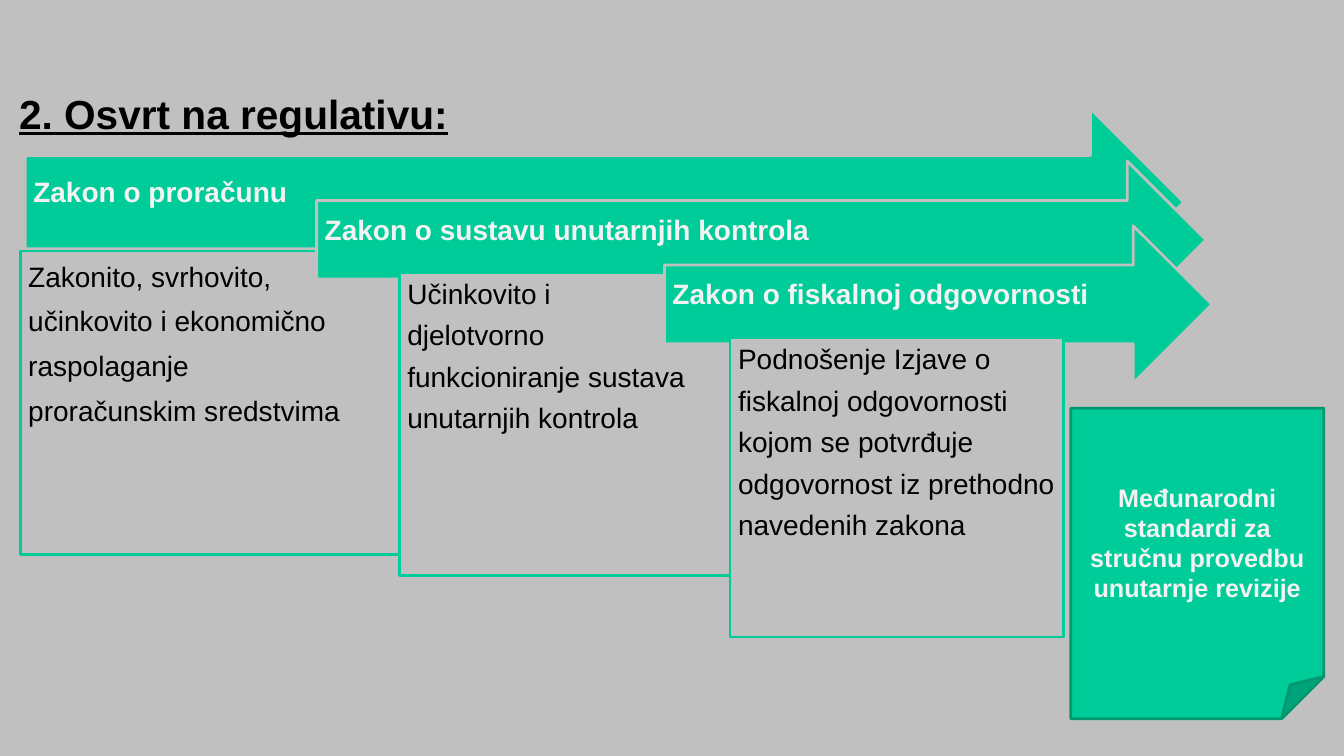
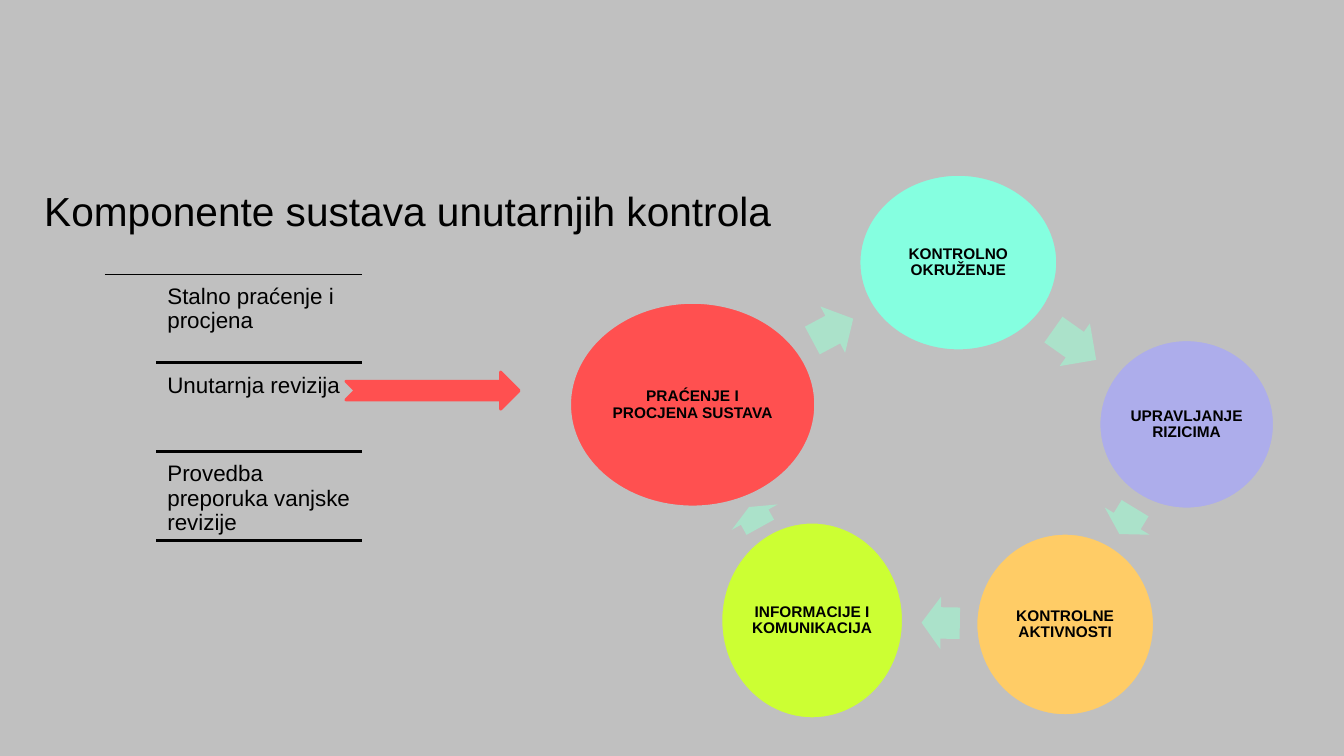
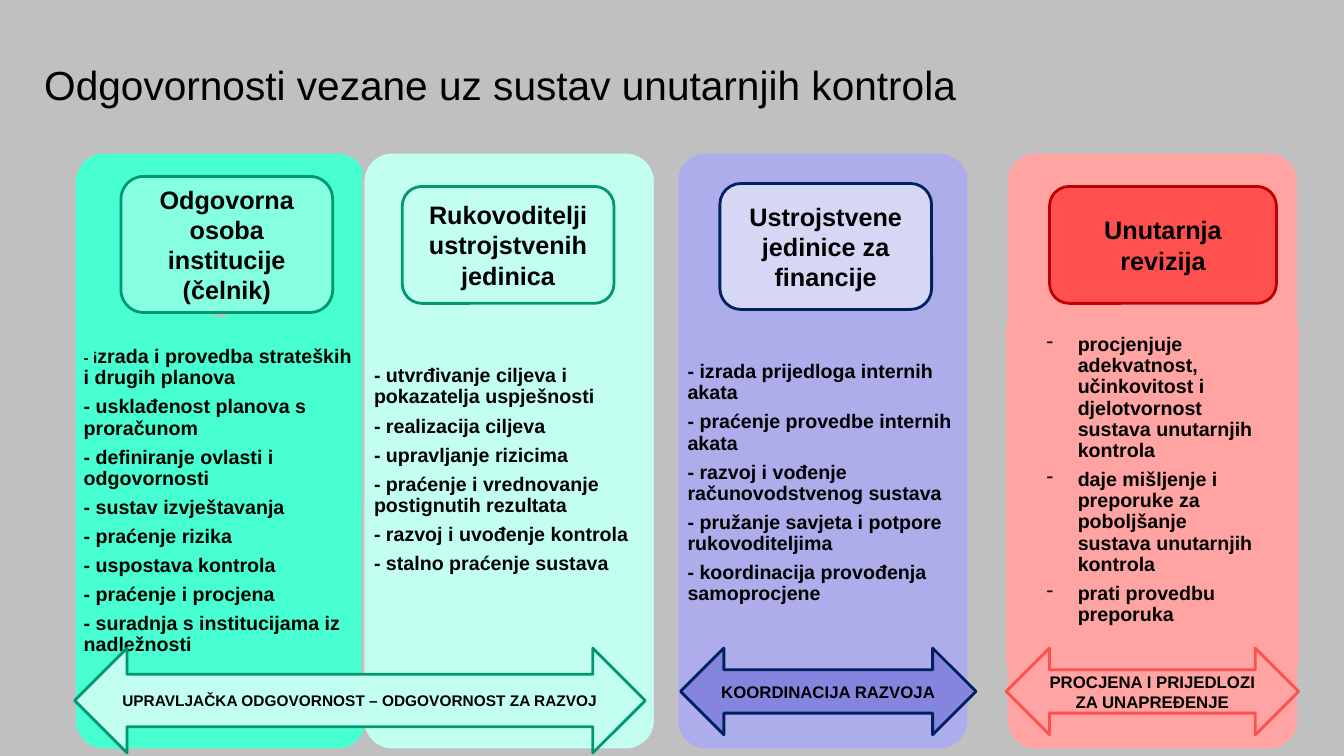
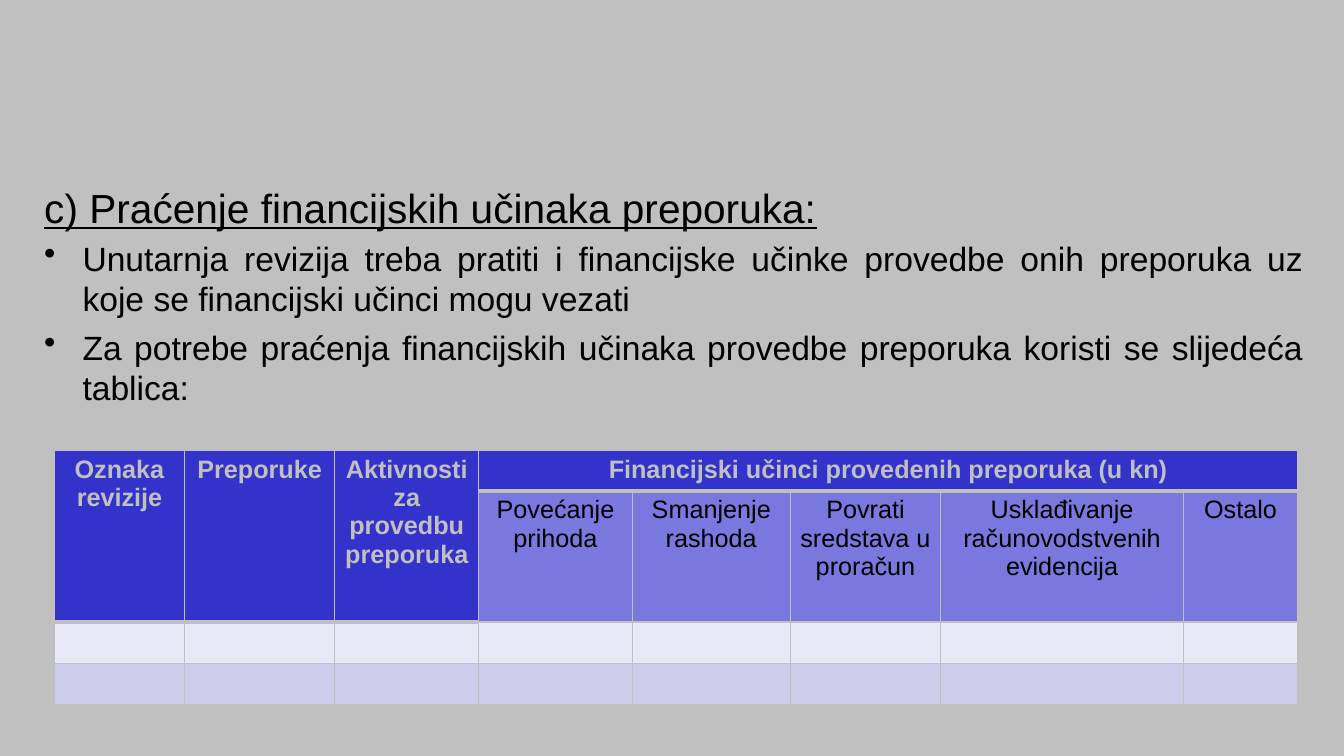
"""Builds four slides on internal control regulation, components, duties and effects."""
import copy

import pptx
import pptx.dml.color
import pptx.enum.shapes
import pptx.enum.text
import pptx.oxml.ns
import pptx.util
from lxml import etree

Inches = pptx.util.Inches
Pt = pptx.util.Pt
RGBColor = pptx.dml.color.RGBColor
MSO_SHAPE = pptx.enum.shapes.MSO_SHAPE
PP_ALIGN = pptx.enum.text.PP_ALIGN
MSO_ANCHOR = pptx.enum.text.MSO_ANCHOR
qn = pptx.oxml.ns.qn

GREY = RGBColor(0xC0, 0xC0, 0xC0)
BLACK = RGBColor(0x00, 0x00, 0x00)
OFF_WHITE = RGBColor(0xF2, 0xF2, 0xF2)
GREEN = RGBColor(0x00, 0xCC, 0x99)
DARK_GREEN = RGBColor(0x00, 0x97, 0x71)
BRIGHT_MINT = RGBColor(0x47, 0xFF, 0xD1)
MINT = RGBColor(0x85, 0xFF, 0xE0)
PALE_MINT = RGBColor(0xC2, 0xFF, 0xF0)
DUSTY_MINT = RGBColor(0xBD, 0xE7, 0xD4)
SAGE = RGBColor(0xAB, 0xE2, 0xCA)
LILAC = RGBColor(0xAD, 0xAD, 0xEB)
PALE_LILAC = RGBColor(0xD6, 0xD6, 0xF5)
VIOLET = RGBColor(0x85, 0x85, 0xE0)
NAVY = RGBColor(0x00, 0x20, 0x60)
ORANGE = RGBColor(0xFF, 0xCC, 0x66)
LIME = RGBColor(0xCC, 0xFF, 0x33)
RED = RGBColor(0xFF, 0x50, 0x50)
DARK_RED = RGBColor(0xC0, 0x00, 0x00)
PINK = RGBColor(0xFF, 0xA3, 0xA3)
HEAD_BLUE = RGBColor(0x33, 0x33, 0xCC)
SUBHEAD_BLUE = RGBColor(0x78, 0x78, 0xDE)
ROW_LIGHT = RGBColor(0xE8, 0xE8, 0xF6)
ROW_DARK = RGBColor(0xCE, 0xCE, 0xEC)


def box(s, kind, at, fill=None, line=None, rotation=0, adjustments=()):
    at = [Inches(v) for v in at]
    if kind is None:
        return s.shapes.add_textbox(*at)
    sp = s.shapes.add_shape(kind, *at)
    sp.shadow.inherit = False
    sp.rotation = rotation
    for i, value in enumerate(adjustments):
        sp.adjustments[i] = value
    sp.fill.solid()
    sp.fill.fore_color.rgb = fill
    if line is None:
        sp.line.fill.background()
    else:
        sp.line.color.rgb = line
        sp.line.width = Pt(2)
    return sp


def write(tf, text, size=18, bold=False, underline=False, color=BLACK,
          align=PP_ALIGN.LEFT, anchor=MSO_ANCHOR.TOP, inset=(0.1, 0.05, 0.1, 0.05),
          spacing=1.0, after=0, bullet=None, indent=0):
    tf.word_wrap = True
    tf.vertical_anchor = anchor
    tf.margin_left, tf.margin_top, tf.margin_right, tf.margin_bottom = map(Inches, inset)
    for i, line in enumerate(text.split("\n")):
        p = tf.add_paragraph() if i else tf.paragraphs[0]
        p.alignment = align
        p.line_spacing = spacing
        p.space_after = Pt(after)
        if bullet:
            pPr = p._p.get_or_add_pPr()
            pPr.set("marL", str(Inches(indent)))
            pPr.set("indent", str(-Inches(indent)))
            etree.SubElement(pPr, qn("a:buChar")).set("char", bullet)
        r = p.add_run()
        r.text = line
        r.font.name = "Arial"
        r.font.size = Pt(size)
        r.font.bold = bold
        r.font.underline = underline
        r.font.color.rgb = color


prs = pptx.Presentation()
prs.slide_width = Inches(13.33)
prs.slide_height = Inches(7.5)

CENTRED = dict(align=PP_ALIGN.CENTER, anchor=MSO_ANCHOR.MIDDLE)

slides = []
for title, left, top, fmt in [
    ("2. Osvrt na regulativu:", 0.09, 0.83, dict(bold=True, underline=True)),
    ("Komponente sustava unutarnjih kontrola", 0.34, 1.8, {}),
    ("Odgovornosti vezane uz sustav unutarnjih kontrola", 0.34, 0.55, {}),
    ("c) Praćenje financijskih učinaka preporuka:", 0.34, 1.77, dict(underline=True)),
]:
    s = prs.slides.add_slide(prs.slide_layouts[6])
    s.background.fill.solid()
    s.background.fill.fore_color.rgb = GREY
    write(box(s, None, (left, top, 12.68, 0.55)).text_frame, title, size=29, **fmt)
    slides.append(s)
regulation, components, duties, effects = slides

for law, arrow_at, purpose, rect_at, spacing in [
    ("Zakon o proračunu", (0.25, 1.08, 11.49, 1.85),
     "Zakonito, svrhovito,\nučinkovito i ekonomično\nraspolaganje\nproračunskim sredstvima",
     (0.2, 2.49, 4.16, 3.01), 1.0),
    ("Zakon o sustavu unutarnjih kontrola", (3.14, 1.6, 8.82, 1.56),
     "Učinkovito i\ndjelotvorno\nfunkcioniranje sustava\nunutarnjih kontrola",
     (3.96, 2.7, 3.31, 3.01), 0.9),
    ("Zakon o fiskalnoj odgovornosti", (6.59, 2.24, 5.43, 1.56),
     "Podnošenje Izjave o\nfiskalnoj odgovornosti\nkojom se potvrđuje\n"
     "odgovornost iz prethodno\nnavedenih zakona",
     (7.24, 3.35, 3.31, 2.97), 0.9),
]:
    sp = box(regulation, MSO_SHAPE.RIGHT_ARROW, arrow_at, GREEN, GREY)
    write(sp.text_frame, law, size=20, bold=True, color=OFF_WHITE, spacing=0.9,
          anchor=MSO_ANCHOR.MIDDLE, inset=(0.08, 0.08, 0.28, 0.25))
    sp = box(regulation, MSO_SHAPE.RECTANGLE, rect_at, GREY, GREEN)
    write(sp.text_frame, purpose, size=20, spacing=spacing, after=8, inset=(0.08,) * 4)

sp = box(regulation, MSO_SHAPE.FOLDED_CORNER, (10.62, 4.05, 2.51, 3.08), GREEN, DARK_GREEN)
write(sp.text_frame, "Međunarodni standardi za stručnu provedbu unutarnje revizije",
      bold=True, color=OFF_WHITE, **CENTRED)

for name, circle_at, fill, arrow_at, rotation in [
    ("KONTROLNO OKRUŽENJE", (8.52, 1.73, 1.97, 1.75), MINT, (10.4, 3.16, 0.52, 0.52), 35.3),
    ("UPRAVLJANJE RIZICIMA", (10.9, 3.37, 1.74, 1.68), LILAC, (11.03, 4.91, 0.3, 0.52), 121.3),
    ("KONTROLNE AKTIVNOSTI", (9.68, 5.29, 1.77, 1.81), ORANGE, (9.14, 5.92, 0.38, 0.52), 180.9),
    ("INFORMACIJE I KOMUNIKACIJA", (7.15, 5.18, 1.81, 1.95), LIME, (7.37, 4.87, 0.23, 0.52), 241),
    ("PRAĆENJE I PROCJENA SUSTAVA", (5.65, 3, 2.44, 2.03), RED, (8.03, 3.01, 0.46, 0.52), 331.9),
]:
    sp = box(components, MSO_SHAPE.OVAL, circle_at, fill, GREY)
    write(sp.text_frame, name, size=11, bold=True, spacing=0.9, inset=(0.02,) * 4, **CENTRED)
    box(components, MSO_SHAPE.RIGHT_ARROW, arrow_at, SAGE, rotation=rotation,
        adjustments=(0.6, 0.5))

for i, activity in enumerate(["Stalno praćenje i procjena", "Unutarnja revizija",
                              "Provedba preporuka vanjske revizije", None]):
    y = 2.72 + 0.88 * i
    cn = components.shapes.add_connector(
        pptx.enum.shapes.MSO_CONNECTOR.STRAIGHT,
        Inches(1.55 if i else 1.04), Inches(y), Inches(3.59), Inches(y))
    cn.line.color.rgb = BLACK
    cn.line.width = Pt(2 if i else 0.75)
    etree.SubElement(cn._element.spPr, qn("a:effectLst"))
    if activity:
        sp = box(components, None, (1.59, y + 0.04, 2.01, 0.84))
        write(sp.text_frame, activity, size=16, spacing=0.9, inset=(0.07,) * 4)

box(components, MSO_SHAPE.NOTCHED_RIGHT_ARROW, (3.43, 3.69, 1.72, 0.37), RED, RED)

DUTY = dict(size=14, bold=True, spacing=0.9, after=5.6)
duty_frames = []
for left, fill, top, inset, text in [
    (0.74, BRIGHT_MINT, 3.35, 0.09,
     "- izrada i provedba strateških i drugih planova\n- usklađenost planova s proračunom\n"
     "- definiranje ovlasti i odgovornosti\n- sustav izvještavanja\n- praćenje rizika\n"
     "- uspostava kontrola\n- praćenje i procjena\n- suradnja s institucijama iz nadležnosti"),
    (3.6, PALE_MINT, 3.52, 0.11,
     "- utvrđivanje ciljeva i pokazatelja uspješnosti\n- realizacija ciljeva\n"
     "- upravljanje rizicima\n- praćenje i vrednovanje postignutih rezultata\n"
     "- razvoj i uvođenje kontrola\n- stalno praćenje sustava"),
    (6.71, LILAC, 3.48, 0.11,
     "- izrada prijedloga internih akata\n- praćenje provedbe internih akata\n"
     "- razvoj i vođenje računovodstvenog sustava\n"
     "- pružanje savjeta i potpore rukovoditeljima\n- koordinacija provođenja samoprocjene"),
    (9.98, PINK, None, None, None),
]:
    box(duties, MSO_SHAPE.ROUNDED_RECTANGLE, (left, 1.51, 2.9, 5.93), fill, GREY,
        adjustments=(0.1,))
    if text:
        tf = box(duties, None, (left, top, 2.9, 3.1)).text_frame
        write(tf, text, inset=(inset,) * 4, **DUTY)
        duty_frames.append(tf)

p = duty_frames[0].paragraphs[0]
p._p.append(copy.deepcopy(p.runs[0]._r))
p.runs[0].text = "- i"
p.runs[0].font.size = Pt(11)
p.runs[1].text = "zrada i provedba strateških i drugih planova"

box(duties, MSO_SHAPE.OVAL, (2, 2.57, 0.38, 0.56), DUSTY_MINT, GREY)
sp = box(duties, MSO_SHAPE.RECTANGLE, (9.98, 3.21, 2.9, 3.39), PINK)
write(sp.text_frame,
      "procjenjuje adekvatnost, učinkovitost i djelotvornost sustava unutarnjih kontrola\n"
      "daje mišljenje i preporuke za poboljšanje sustava unutarnjih kontrola\n"
      "prati provedbu preporuka",
      inset=(0.4, 0.11, 0.4, 0.05), bullet="-", indent=0.31, **DUTY)

for kind, at, fill, line, size, text in [
    (MSO_SHAPE.ROUNDED_RECTANGLE, (1.2, 1.75, 2.1, 1.35), MINT, DARK_GREEN, 18,
     "Odgovorna osoba institucije (čelnik)"),
    (MSO_SHAPE.ROUNDED_RECTANGLE, (3.99, 1.85, 2.1, 1.16), PALE_MINT, DARK_GREEN, 18,
     "Rukovoditelji ustrojstvenih jedinica"),
    (MSO_SHAPE.ROUNDED_RECTANGLE, (7.14, 1.82, 2.1, 1.25), PALE_LILAC, NAVY, 18,
     "Ustrojstvene jedinice za financije"),
    (MSO_SHAPE.ROUNDED_RECTANGLE, (10.41, 1.85, 2.25, 1.16), RED, DARK_RED, 18,
     "Unutarnja revizija"),
    (MSO_SHAPE.LEFT_RIGHT_ARROW, (0.74, 6.43, 5.66, 1.04), PALE_MINT, DARK_GREEN, 11,
     "UPRAVLJAČKA ODGOVORNOST – ODGOVORNOST ZA RAZVOJ"),
    (MSO_SHAPE.LEFT_RIGHT_ARROW, (6.75, 6.43, 2.93, 0.86), VIOLET, NAVY, 12,
     "KOORDINACIJA RAZVOJA"),
    (MSO_SHAPE.LEFT_RIGHT_ARROW, (9.98, 6.43, 2.9, 0.86), PINK, RED, 12,
     "PROCJENA I PRIJEDLOZI ZA UNAPREĐENJE"),
]:
    write(box(duties, kind, at, fill, line).text_frame, text, size=size, bold=True, **CENTRED)

write(box(effects, None, (0.34, 2.31, 12.68, 1.75)).text_frame,
      "Unutarnja revizija treba pratiti i financijske učinke provedbe onih preporuka uz koje "
      "se financijski učinci mogu vezati\n"
      "Za potrebe praćenja financijskih učinaka provedbe preporuka koristi se slijedeća tablica:",
      size=24, align=PP_ALIGN.JUSTIFY, after=6, bullet="•", indent=0.38)

COLS = [1.29, 1.49, 1.43, 1.52, 1.57, 1.49, 2.41, 1.13]
ROWS = [0.4, 1.22, 0.41, 0.41]
HEADS = ["Oznaka revizije", "Preporuke", "Aktivnosti za provedbu preporuka",
         "Financijski učinci provedenih preporuka (u kn)"]
SUBHEADS = ["Povećanje prihoda", "Smanjenje rashoda", "Povrati sredstava u proračun",
            "Usklađivanje računovodstvenih evidencija", "Ostalo"]
texts = [HEADS + [""] * 4, [""] * 3 + SUBHEADS, [""] * 8, [""] * 8]

table = effects.shapes.add_table(len(ROWS), len(COLS), Inches(0.54), Inches(4.47),
                                 Inches(sum(COLS)), Inches(sum(ROWS))).table
table.first_row = False
table.horz_banding = False
for i, width in enumerate(COLS):
    table.columns[i].width = Inches(width)
for i, height in enumerate(ROWS):
    table.rows[i].height = Inches(height)
for col in range(3):
    table.cell(0, col).merge(table.cell(1, col))
table.cell(0, 3).merge(table.cell(0, 7))

for row, line in enumerate(texts):
    for col, text in enumerate(line):
        cell = table.cell(row, col)
        is_head = row == 0 or (row == 1 and col < 3)
        tcPr = cell._tc.get_or_add_tcPr()
        for side in "LRTB":
            ln = etree.SubElement(tcPr, qn("a:ln" + side))
            ln.set("w", str(Pt(3 if is_head and side == "B" else 1)))
            fill = etree.SubElement(ln, qn("a:solidFill"))
            etree.SubElement(fill, qn("a:srgbClr")).set("val", str(GREY))
        cell.fill.solid()
        cell.fill.fore_color.rgb = (
            HEAD_BLUE if is_head else [None, SUBHEAD_BLUE, ROW_LIGHT, ROW_DARK][row])
        cell.margin_left = cell.margin_right = Inches(0.07)
        if text:
            write(cell.text_frame, text, bold=is_head, color=GREY if is_head else BLACK,
                  align=PP_ALIGN.CENTER, inset=(0.07, 0.05, 0.07, 0.05))

prs.save("out.pptx")
